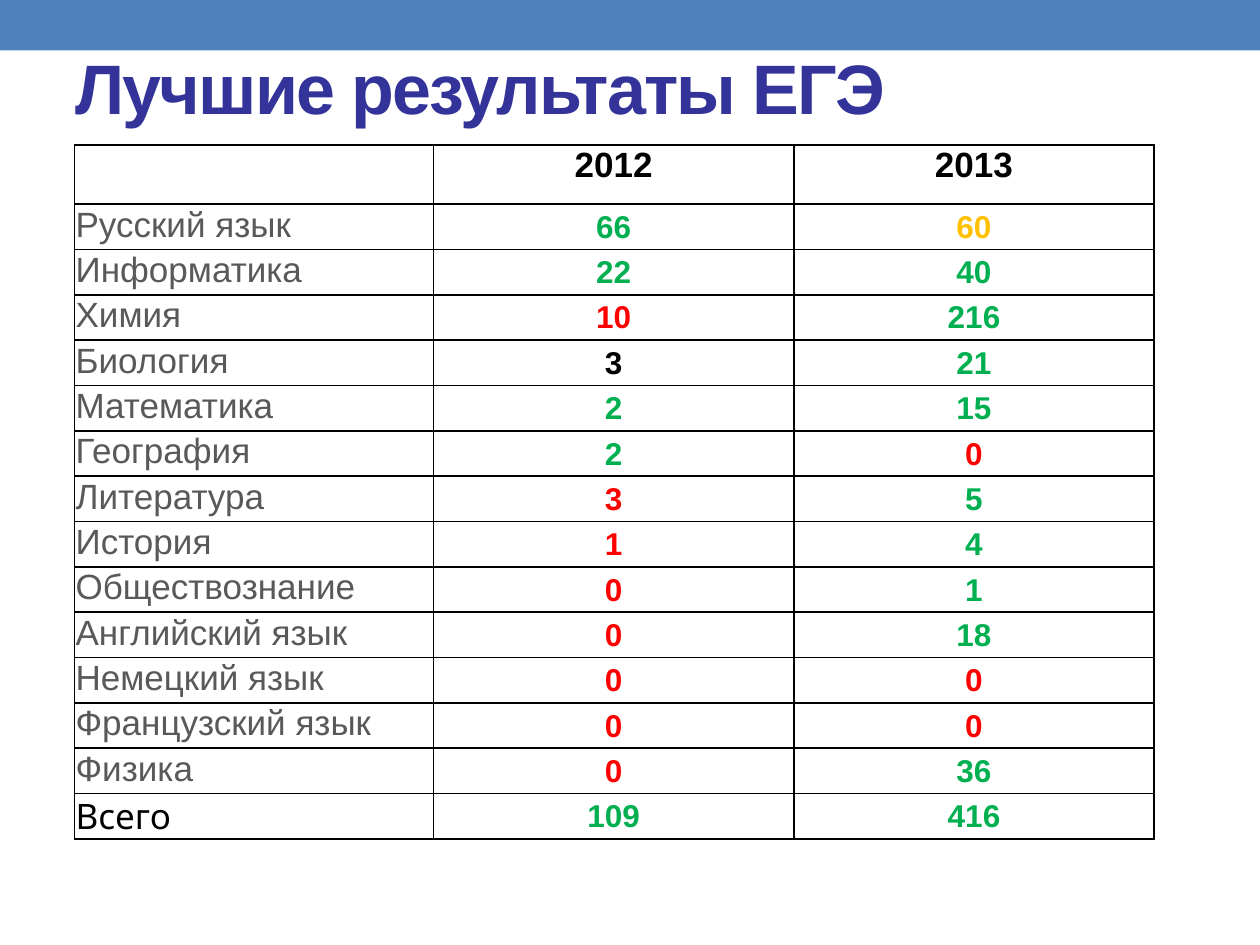
from dataclasses import dataclass

from lxml.etree import SubElement
from pptx import Presentation
from pptx.dml.color import RGBColor
from pptx.enum.shapes import MSO_SHAPE as Shape
from pptx.enum.text import MSO_ANCHOR as Anchor, PP_ALIGN as Align
from pptx.oxml.ns import qn
from pptx.util import Inches, Pt


@dataclass(frozen=True)
class Theme:
    font: str = "Arial"
    total_font: str = "Cabin"
    band: str = "4F81BD"
    title: str = "333399"
    subject: str = "595959"
    black: str = "000000"
    green: str = "00B050"
    red: str = "FF0000"
    amber: str = "FFC000"
    title_size: int = 40
    label_size: int = 20
    value_size: int = 18
    border_width: int = 1


THEME = Theme()
GREEN, RED, AMBER, BLACK = THEME.green, THEME.red, THEME.amber, THEME.black

TITLE = "Лучшие результаты ЕГЭ"
YEARS = ["2012", "2013"]
SUBJECTS = [
    ("Русский язык", ("66", GREEN), ("60", AMBER)),
    ("Информатика", ("22", GREEN), ("40", GREEN)),
    ("Химия", ("10", RED), ("216", GREEN)),
    ("Биология", ("3", BLACK), ("21", GREEN)),
    ("Математика", ("2", GREEN), ("15", GREEN)),
    ("География", ("2", GREEN), ("0", RED)),
    ("Литература", ("3", RED), ("5", GREEN)),
    ("История", ("1", RED), ("4", GREEN)),
    ("Обществознание", ("0", RED), ("1", GREEN)),
    ("Английский язык", ("0", RED), ("18", GREEN)),
    ("Немецкий язык", ("0", RED), ("0", RED)),
    ("Французский язык", ("0", RED), ("0", RED)),
    ("Физика", ("0", RED), ("36", GREEN)),
]
TOTAL = ("Всего", ("109", GREEN), ("416", GREEN))

COLUMN_WIDTHS = [2.85, 2.86, 2.86]
HEADER_HEIGHT, ROW_HEIGHT = 0.47, 0.36


def style_paragraph(paragraph, size, color, bold=False, align=Align.LEFT, font=THEME.font):
    paragraph.alignment = align
    paragraph.font.name = font
    paragraph.font.size = Pt(size)
    paragraph.font.bold = bold
    paragraph.font.color.rgb = RGBColor.from_string(color)


def add_borders(cell):
    properties = cell._tc.get_or_add_tcPr()
    for side in ("a:lnL", "a:lnR", "a:lnT", "a:lnB"):
        line = SubElement(properties, qn(side), w=str(Pt(THEME.border_width)))
        fill = SubElement(line, qn("a:solidFill"))
        SubElement(fill, qn("a:srgbClr"), val=THEME.black)


def fill_cell(cell, text, size, color, anchor=Anchor.MIDDLE, side_margin=0.01,
              top_margin=0.01, **style):
    cell.text = text
    cell.vertical_anchor = anchor
    cell.margin_left = cell.margin_right = Inches(side_margin)
    cell.margin_top, cell.margin_bottom = Inches(top_margin), 0
    style_paragraph(cell.text_frame.paragraphs[0], size, color, **style)


def add_band(slide, width):
    band = slide.shapes.add_shape(Shape.RECTANGLE, 0, 0, width, Inches(0.4))
    band.shadow.inherit = False
    band.fill.solid()
    band.fill.fore_color.rgb = RGBColor.from_string(THEME.band)
    band.line.fill.background()


def add_title(slide):
    box = slide.shapes.add_textbox(Inches(0.5), Inches(0.3), Inches(9), Inches(0.77))
    frame = box.text_frame
    frame.word_wrap = True
    frame.vertical_anchor = Anchor.MIDDLE
    paragraph = frame.paragraphs[0]
    run = paragraph.add_run()
    run.text = TITLE
    run._r.get_or_add_rPr().set("spc", "-100")
    style_paragraph(paragraph, THEME.title_size, THEME.title, bold=True)


def add_results_table(slide):
    rows = [*SUBJECTS, TOTAL]
    heights = [HEADER_HEIGHT] + [ROW_HEIGHT] * len(rows)
    table = slide.shapes.add_table(
        len(heights), len(COLUMN_WIDTHS), Inches(0.59), Inches(1.15),
        Inches(sum(COLUMN_WIDTHS)), Inches(sum(heights))).table
    table.first_row = table.horz_banding = False
    for column, width in zip(table.columns, COLUMN_WIDTHS):
        column.width = Inches(width)
    for row, height in zip(table.rows, heights):
        row.height = Inches(height)
    for cell in table.iter_cells():
        add_borders(cell)
        cell.fill.background()

    for column, year in enumerate(YEARS, start=1):
        fill_cell(table.cell(0, column), year, THEME.label_size, BLACK,
                  anchor=Anchor.TOP, bold=True, align=Align.CENTER)
    for index, (label, *results) in enumerate(rows, start=1):
        is_total = index == len(rows)
        if is_total:
            fill_cell(table.cell(index, 0), label, THEME.label_size, BLACK,
                      font=THEME.total_font)
        else:
            fill_cell(table.cell(index, 0), label, THEME.label_size, THEME.subject,
                      anchor=Anchor.TOP)
        margins = {"side_margin": 0.07, "top_margin": 0} if is_total else {}
        for column, (value, color) in enumerate(results, start=1):
            fill_cell(table.cell(index, column), value, THEME.value_size, color,
                      bold=True, align=Align.CENTER, **margins)


def main():
    presentation = Presentation()
    presentation.slide_width, presentation.slide_height = Inches(10), Inches(7.5)
    slide = presentation.slides.add_slide(presentation.slide_layouts[6])
    add_band(slide, presentation.slide_width)
    add_title(slide)
    add_results_table(slide)
    presentation.save("out.pptx")


if __name__ == "__main__":
    main()
